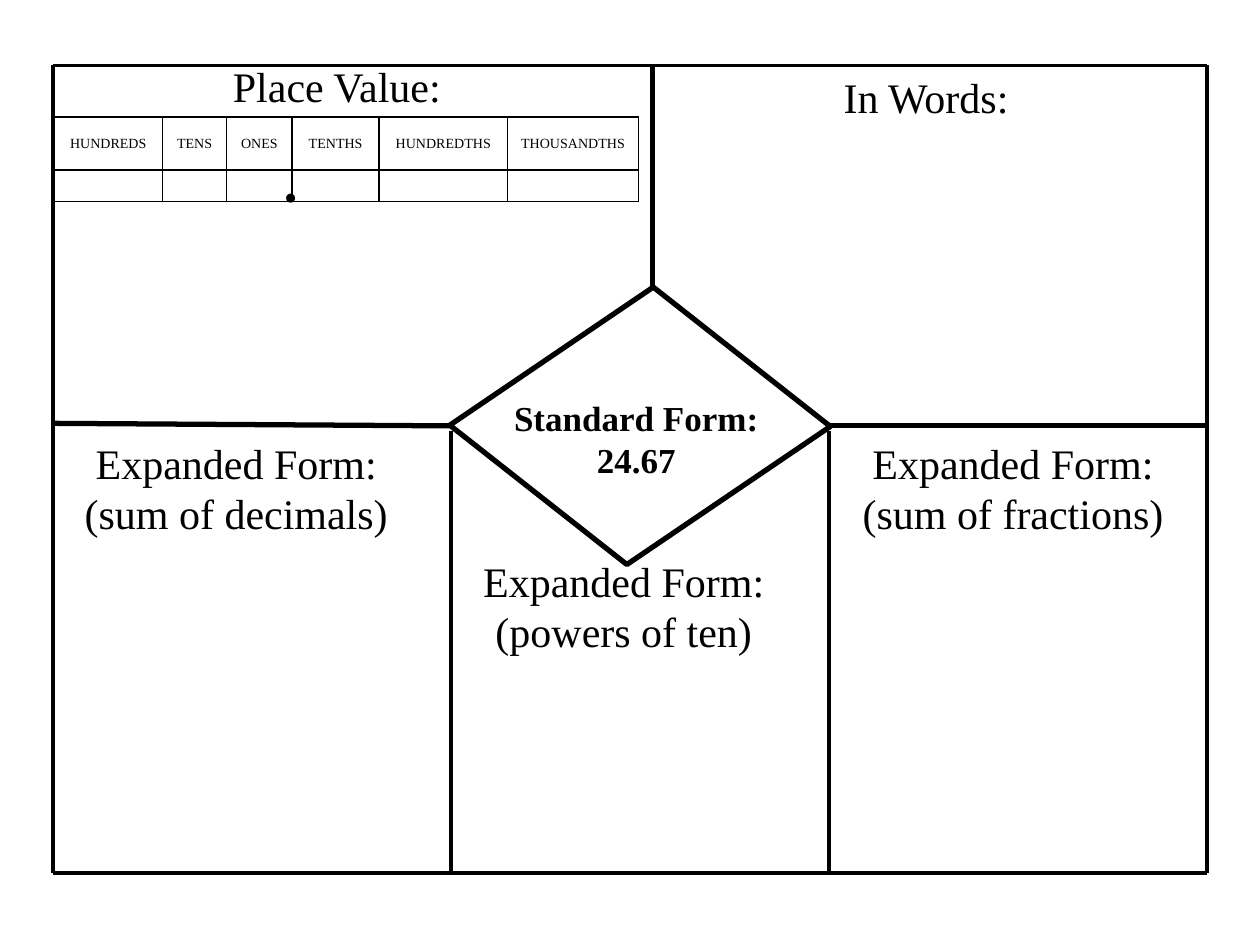
from lxml import etree
from pptx import Presentation
from pptx import util as u
from pptx.dml import color
from pptx.enum import shapes, text
from pptx.oxml import ns

FONT = "Times New Roman"
BLACK, WHITE = "000000", "FFFFFF"
LEFT, RIGHT, TOP, BOTTOM = 0.42, 9.58, 0.52, 6.93
POST_LEFT, POST_RIGHT, SHELF, PANEL_TOP = 3.58, 6.58, 3.38, 3.42
APEX_X, APEX_Y = 5.18, 2.27
PLACES = {"HUNDREDS": 0.86, "TENS": 0.51, "ONES": 0.52, "TENTHS": 0.69,
          "HUNDREDTHS": 1.02, "THOUSANDTHS": 1.04}
ROW_HEIGHTS = [0.42, 0.25]


def rgb(value):
    """Turn a hex string into a colour."""
    return color.RGBColor.from_string(value)


def inches(*lengths):
    """Turn numbers into lengths in inches."""
    return [u.Inches(length) for length in lengths]


def write(frame, content, size=24, bold=False, align=text.PP_ALIGN.CENTER):
    """Write each line of content as a formatted paragraph."""
    for index, line in enumerate(content.split("\n")):
        paragraph = frame.add_paragraph() if index else frame.paragraphs[0]
        paragraph.alignment = align
        paragraph.font.size = u.Pt(size)
        run = paragraph.add_run()
        run.text = line
        run.font.name = FONT
        run.font.size = u.Pt(size)
        run.font.bold = bold
        run.font.color.rgb = rgb(BLACK)


def add_label(slide, box, content, wrap=True, **style):
    """Add a text box holding a label."""
    frame = slide.shapes.add_textbox(*inches(*box)).text_frame
    frame.word_wrap = wrap
    write(frame, content, **style)


def add_rule(slide, start, end, weight=2):
    """Draw a straight black rule without a shadow."""
    rule = slide.shapes.add_connector(
        shapes.MSO_CONNECTOR.STRAIGHT, *inches(*start, *end))
    rule.line.color.rgb = rgb(BLACK)
    rule.line.width = u.Pt(weight)
    etree.SubElement(rule._element.spPr, ns.qn("a:effectLst"))


def add_diamond(slide):
    """Draw the tilted parallelogram in the middle."""
    diamond = slide.shapes.add_shape(
        shapes.MSO_SHAPE.PARALLELOGRAM, *inches(3.89, 2.45, 2.38, 1.86))
    diamond.adjustments[0] = 0.318
    diamond.rotation = 38.2
    diamond.shadow.inherit = False
    diamond.fill.solid()
    diamond.fill.fore_color.rgb = rgb(WHITE)
    diamond.line.color.rgb = rgb(BLACK)
    diamond.line.width = u.Pt(3)


def border(cell):
    """Give a cell a thin black line on every side."""
    properties = cell._tc.get_or_add_tcPr()
    for index, side in enumerate(("lnL", "lnR", "lnT", "lnB")):
        edge = etree.Element(ns.qn(f"a:{side}"), w=str(u.Pt(1)))
        fill = etree.SubElement(edge, ns.qn("a:solidFill"))
        etree.SubElement(fill, ns.qn("a:srgbClr"), val=BLACK)
        properties.insert(index, edge)


def add_place_table(slide):
    """Add the place value table with an empty row for digits."""
    size = (sum(PLACES.values()), sum(ROW_HEIGHTS))
    table = slide.shapes.add_table(
        len(ROW_HEIGHTS), len(PLACES), *inches(0.43, 0.93, *size)).table
    table.first_row = table.horz_banding = False
    for row, height in zip(table.rows, ROW_HEIGHTS):
        row.height = u.Inches(height)
    for index, (place, width) in enumerate(PLACES.items()):
        table.columns[index].width = u.Inches(width)
        heading = table.cell(0, index)
        heading.vertical_anchor = text.MSO_ANCHOR.MIDDLE
        write(heading.text_frame, place, size=8)
        table.cell(1, index).text_frame.paragraphs[0].font.size = u.Pt(8)
    for cell in table.iter_cells():
        cell.fill.background()
        border(cell)


def main():
    """Build the number form worksheet."""
    deck = Presentation()
    deck.slide_width, deck.slide_height = inches(10, 7.5)
    slide = deck.slides.add_slide(deck.slide_layouts[6])

    add_diamond(slide)
    add_label(slide, (3.71, 3.1, 2.68, 0.86), "Standard Form:\n24.67",
              size=20, bold=True)
    add_label(slide, (2.16, 1.41, 0.33, 0.39), "●", size=12,
              align=text.PP_ALIGN.LEFT)
    add_label(slide, (1.75, 0.43, 1.89, 0.8), "Place Value:", wrap=False,
              align=text.PP_ALIGN.LEFT)
    add_label(slide, (5.12, TOP, 4.46, 2.9), "In Words:")
    for box, method in (
            ((6.5, PANEL_TOP, 3.08, 2.96), "sum of fractions"),
            ((3.59, 4.36, 2.72, 1.86), "powers of ten"),
            ((LEFT, PANEL_TOP, 2.91, 2.96), "sum of decimals")):
        add_label(slide, box, f"Expanded Form:\n({method})")

    for y in (TOP, BOTTOM):
        add_rule(slide, (LEFT, y), (RIGHT, y))
    for x, y in ((LEFT, TOP), (RIGHT, TOP),
                 (POST_LEFT, PANEL_TOP), (POST_RIGHT, PANEL_TOP)):
        add_rule(slide, (x, y), (x, BOTTOM))
    add_place_table(slide)
    add_rule(slide, (LEFT, 3.36), (POST_LEFT, SHELF), weight=3)
    add_rule(slide, (APEX_X, APEX_Y), (APEX_X, TOP), weight=3)
    add_rule(slide, (POST_RIGHT, SHELF), (RIGHT, SHELF), weight=3)
    deck.save("out.pptx")


if __name__ == "__main__":
    main()
